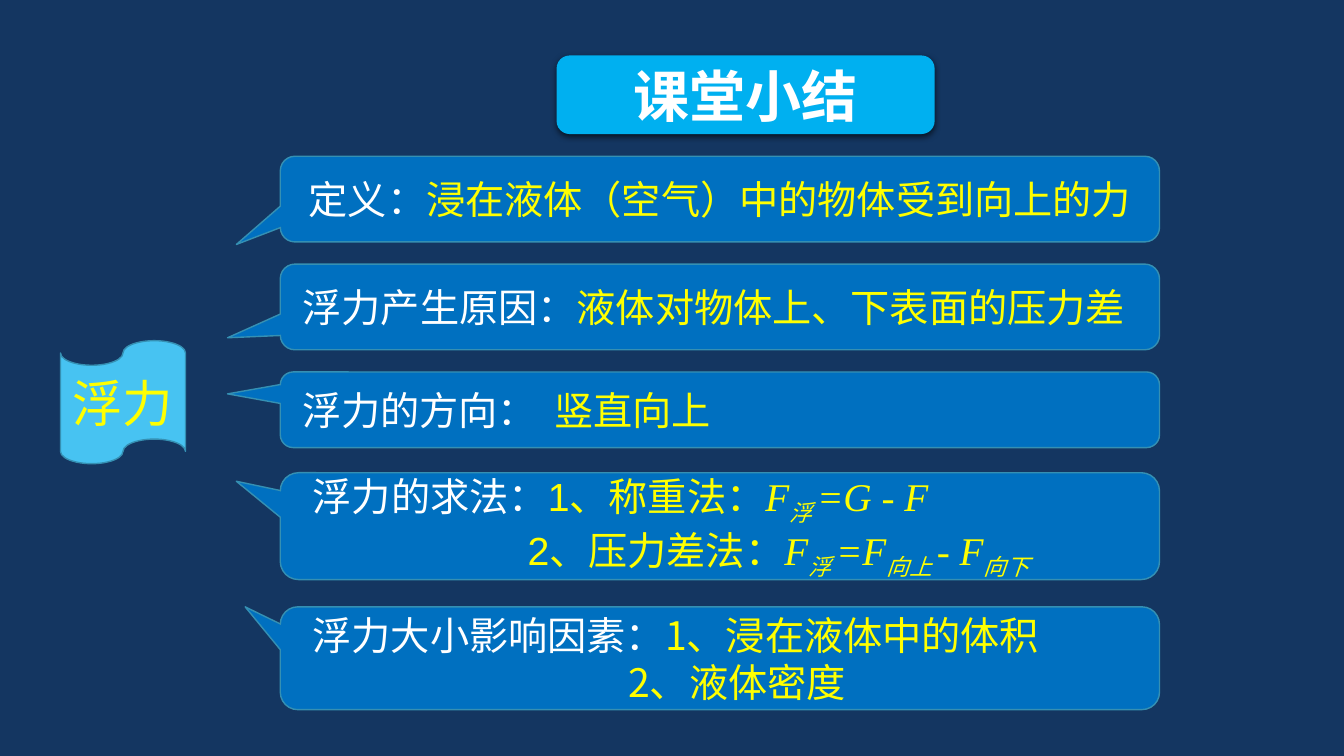
from dataclasses import dataclass

from lxml import etree
from pptx import Presentation
from pptx import util as u
from pptx.dml.color import RGBColor
from pptx.enum import shapes, text
from pptx.oxml import ns


@dataclass(frozen=True)
class Theme:
    background: str = "143661"
    title_fill: str = "00B0F0"
    topic_fill: str = "47C3F2"
    callout_fill: str = "0070C0"
    outline: str = "3590B3"
    label: str = "FFFFFF"
    answer: str = "FFFF00"
    chinese: str = "Noto Sans CJK SC"
    latin: str = "Arial"
    formula: str = "Times New Roman"
    title_size: int = 40
    topic_size: int = 36
    body_size: int = 28


def add_run(paragraph, content, *, size, color, font, east_asian,
            bold=False, italic=False, baseline=0):
    run = paragraph.add_run()
    run.text = content
    run.font.size = u.Pt(size)
    run.font.name = font
    run.font.bold = bold
    run.font.italic = italic
    run.font.color.rgb = RGBColor.from_string(color)
    properties = run.font._element
    if baseline:
        properties.set("baseline", str(baseline * 1000))
    properties.find(ns.qn("a:latin")).addnext(
        etree.Element(ns.qn("a:ea"), typeface=east_asian))


class SummarySlide:
    def __init__(self, deck, theme):
        self.theme = theme
        self.slide = deck.slides.add_slide(deck.slide_layouts[6])
        fill = self.slide.background.fill
        fill.solid()
        fill.fore_color.rgb = RGBColor.from_string(theme.background)

    def panel(self, kind, box, fill, outline=None):
        panel = self.slide.shapes.add_shape(kind, *map(u.Inches, box))
        panel.shadow.inherit = False
        panel.fill.solid()
        panel.fill.fore_color.rgb = RGBColor.from_string(fill)
        if outline:
            panel.line.color.rgb = RGBColor.from_string(outline)
            panel.line.width = u.Pt(1)
        else:
            panel.line.fill.background()
        panel.text_frame.word_wrap = True
        panel.text_frame.vertical_anchor = text.MSO_ANCHOR.MIDDLE
        return panel

    def phrase(self, paragraph, content, **style):
        defaults = dict(size=self.theme.body_size, color=self.theme.answer,
                        font=self.theme.chinese, east_asian=self.theme.chinese)
        add_run(paragraph, content, **(defaults | style))

    def heading(self, kind, box, content, fill, outline=None, **style):
        heading = self.panel(kind, box, fill, outline)
        paragraph = heading.text_frame.paragraphs[0]
        paragraph.alignment = text.PP_ALIGN.CENTER
        self.phrase(paragraph, content, **style)
        return heading

    def soft_shadow(self, panel):
        effects = panel._element.spPr.find(ns.qn("a:effectLst"))
        shadow = etree.SubElement(
            effects, ns.qn("a:outerShdw"), blurRad=str(u.Pt(4.5)),
            dist=str(u.Pt(1.5)), dir="5400000", algn="ctr", rotWithShape="0")
        color = etree.SubElement(shadow, ns.qn("a:srgbClr"), val="000000")
        etree.SubElement(color, ns.qn("a:alpha"), val="63000")

    def callout(self, top, height, pointer, lines, inset=0.1,
                second_indent=0, tab=None, centered=False):
        callout = self.panel(shapes.MSO_SHAPE.ROUNDED_RECTANGULAR_CALLOUT,
                             (2.78, top, 8.72, height),
                             self.theme.callout_fill, self.theme.outline)
        for index, value in enumerate((*pointer, 0.17)):
            callout.adjustments[index] = value
        frame = callout.text_frame
        frame.margin_left = u.Inches(inset)
        for index, line in enumerate(lines):
            paragraph = frame.add_paragraph() if index else frame.paragraphs[0]
            paragraph.alignment = (text.PP_ALIGN.CENTER if centered
                                   else text.PP_ALIGN.LEFT)
            properties = paragraph._p.get_or_add_pPr()
            if index:
                properties.set("marL", str(u.Inches(second_indent)))
            if tab:
                stops = etree.SubElement(properties, ns.qn("a:tabLst"))
                etree.SubElement(stops, ns.qn("a:tab"),
                                 pos=str(u.Inches(tab)), algn="l")
            for content, style in line:
                self.phrase(paragraph, content, **style)


def main():
    theme = Theme()
    deck = Presentation()
    deck.slide_width, deck.slide_height = u.Inches(13.33), u.Inches(7.5)
    summary = SummarySlide(deck, theme)

    label = dict(color=theme.label)
    answer = {}
    method = dict(font=theme.latin)
    force = dict(font=theme.formula, italic=True)
    subscript = force | dict(baseline=-25)

    title = summary.heading(
        shapes.MSO_SHAPE.ROUNDED_RECTANGLE, (5.52, 0.55, 3.75, 0.78), "课堂小结",
        theme.title_fill, size=theme.title_size, color=theme.label, bold=True)
    summary.soft_shadow(title)
    summary.heading(
        shapes.MSO_SHAPE.FLOWCHART_PUNCHED_TAPE, (0.6, 3.38, 1.24, 1.22), "浮力",
        theme.topic_fill, theme.outline, size=theme.topic_size)

    summary.callout(1.55, 0.85, (-0.55, 0.53), [
        [("定义：", label), ("浸在液体（空气）中的物体受到向上的力", answer)],
    ], centered=True)
    summary.callout(2.62, 0.85, (-0.56, 0.36), [
        [("浮力产生原因：", label), ("液体对物体上、下表面的压力差", answer)],
    ], inset=0.18)
    summary.callout(3.69, 0.75, (-0.56, -0.21), [
        [("浮力的方向：\t", label), ("竖直向上", answer)],
    ], inset=0.18, tab=2.5)
    summary.callout(4.69, 1.06, (-0.55, -0.42), [
        [("浮力的求法：", label), ("1、称重法：", method),
         ("F", force), ("浮 ", subscript), ("=G - F", force)],
        [("2、压力差法：", method), ("F", force), ("浮 ", subscript),
         ("=F", force), ("向上 ", subscript), ("- F", force),
         ("向下", subscript)],
    ], inset=0.27, second_indent=2.13)
    summary.callout(6.02, 1.02, (-0.54, -0.5), [
        [("浮力大小影响因素：", label), ("1、浸在液体中的体积", answer)],
        [("2、液体密度", answer)],
    ], inset=0.27, second_indent=3.13)

    deck.save("out.pptx")


if __name__ == "__main__":
    main()
